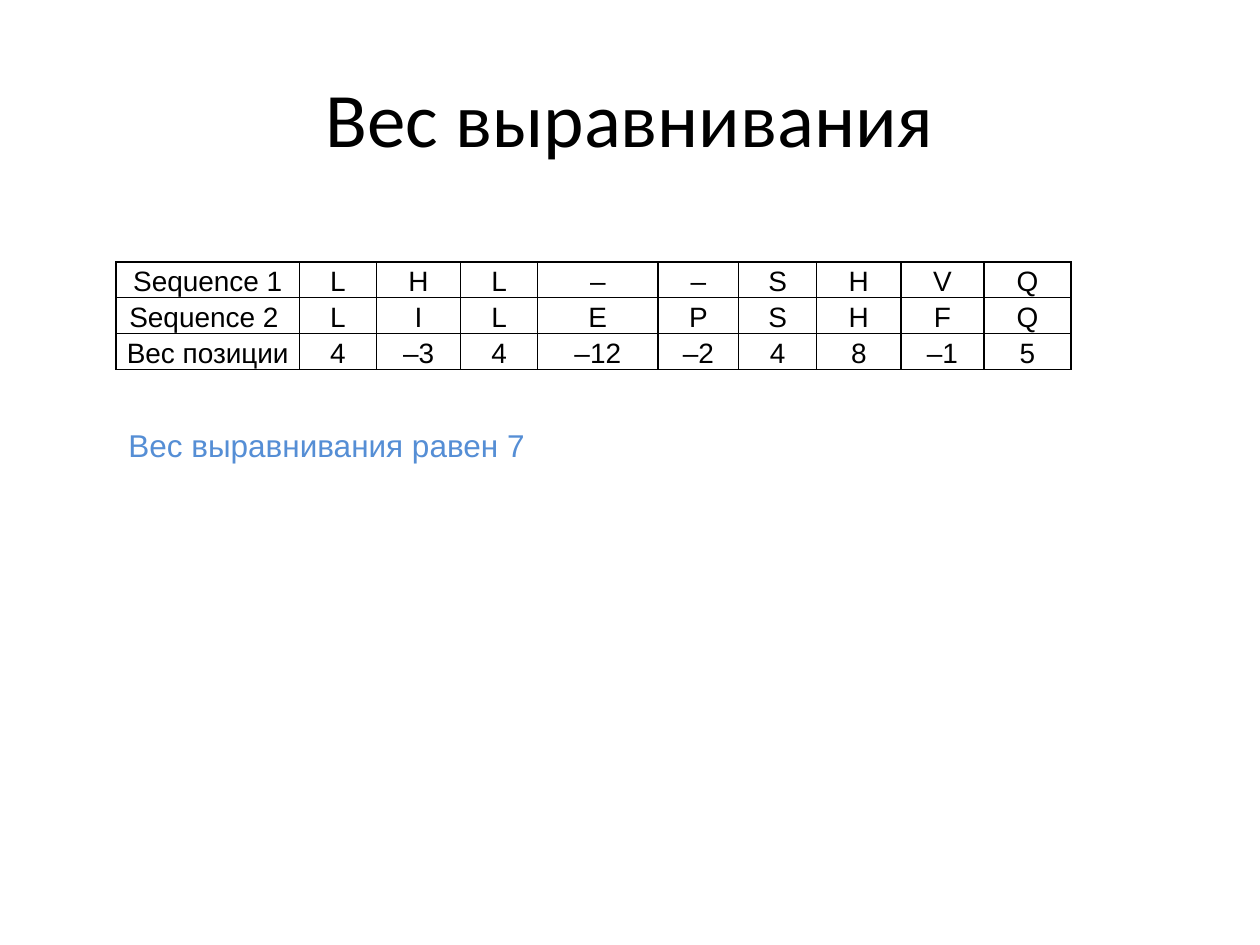
from lxml import etree
from pptx import Presentation
from pptx.dml.color import RGBColor
from pptx.enum.text import MSO_ANCHOR, MSO_AUTO_SIZE, PP_ALIGN
from pptx.oxml.ns import qn
from pptx.util import Inches, Pt

CENTER = PP_ALIGN.CENTER
MIDDLE = MSO_ANCHOR.MIDDLE
GROW = MSO_AUTO_SIZE.SHAPE_TO_FIT_TEXT
COLORS = {"ink": "000000", "note": "558ED5"}
WIDE, HIGH = Inches(10), Inches(7.5)
COLS = [1.46, 0.61, 0.67, 0.61, 0.96, 0.64, 0.62, 0.67, 0.66, 0.69]
ROWS = [
    ["Sequence 1", *"LHL––SHVQ"],
    ["Sequence 2 ", *"LILEPSHFQ"],
    ["Вес позиции", "4", "–3", "4", "–12", "–2", "4", "8", "–1", "5"],
]


def share(left, top, width, height):
    """Turn shares of the slide into a box of lengths."""
    return int(left * WIDE), int(top * HIGH), int(width * WIDE), int(height * HIGH)


def style(para, face, size, color):
    """Format every run of a paragraph."""
    for run in para.runs:
        run.font.name = face
        run.font.size = Pt(size)
        run.font.color.rgb = RGBColor.from_string(COLORS[color])


def border(cell, color, width=1):
    """Draw a solid line on all four sides of a cell."""
    props = cell._tc.get_or_add_tcPr()
    for side in ("a:lnL", "a:lnR", "a:lnT", "a:lnB"):
        line = etree.SubElement(props, qn(side), w=str(Pt(width)))
        fill = etree.SubElement(line, qn("a:solidFill"))
        etree.SubElement(fill, qn("a:srgbClr"), val=COLORS[color])


def add_title(slide, box, text):
    """Fill the title placeholder."""
    title = slide.shapes.title
    title.left, title.top, title.width, title.height = box
    frame = title.text_frame
    frame.text = text
    frame.vertical_anchor = MIDDLE
    para = frame.paragraphs[0]
    para.alignment = CENTER
    style(para, "Calibri", 44, "ink")


def fill_cell(cell, text):
    """Write, format and frame one table cell."""
    cell.margin_left = cell.margin_right = Inches(0.07)
    cell.margin_top = cell.margin_bottom = 0
    cell.text_frame.text = text
    para = cell.text_frame.paragraphs[0]
    para.alignment = CENTER
    para.line_spacing = 1.15
    style(para, "Arial", 16, "ink")
    border(cell, "ink")
    cell.fill.background()


def add_grid(slide, box, rows, cols):
    """Add the alignment table, with columns in proportion to cols."""
    table = slide.shapes.add_table(len(rows), len(cols), *box).table
    table.first_row = table.horz_banding = False
    for col, part in zip(table.columns, cols):
        col.width = int(box[2] * part / sum(cols))
    for row, texts in zip(table.rows, rows):
        for cell, text in zip(row.cells, texts):
            fill_cell(cell, text)


def add_note(slide, box, text):
    """Add the line that states the total weight."""
    frame = slide.shapes.add_textbox(*box).text_frame
    frame.word_wrap = True
    frame.auto_size = GROW
    frame.vertical_anchor = MIDDLE
    frame.text = text
    style(frame.paragraphs[0], "Arial", 18, "note")


def main():
    """Build and save the slide."""
    deck = Presentation()
    deck.slide_width, deck.slide_height = WIDE, HIGH
    slide = deck.slides.add_slide(deck.slide_layouts[5])
    add_title(slide, share(0.05, 0.04, 0.9, 1 / 6), "Вес выравнивания")
    add_grid(slide, share(0.092, 0.277, 0.758, 0.114), ROWS, COLS)
    add_note(slide, share(0.092, 0.444, 0.625, 0.053), "Вес выравнивания равен 7")
    deck.save("out.pptx")


if __name__ == "__main__":
    main()
